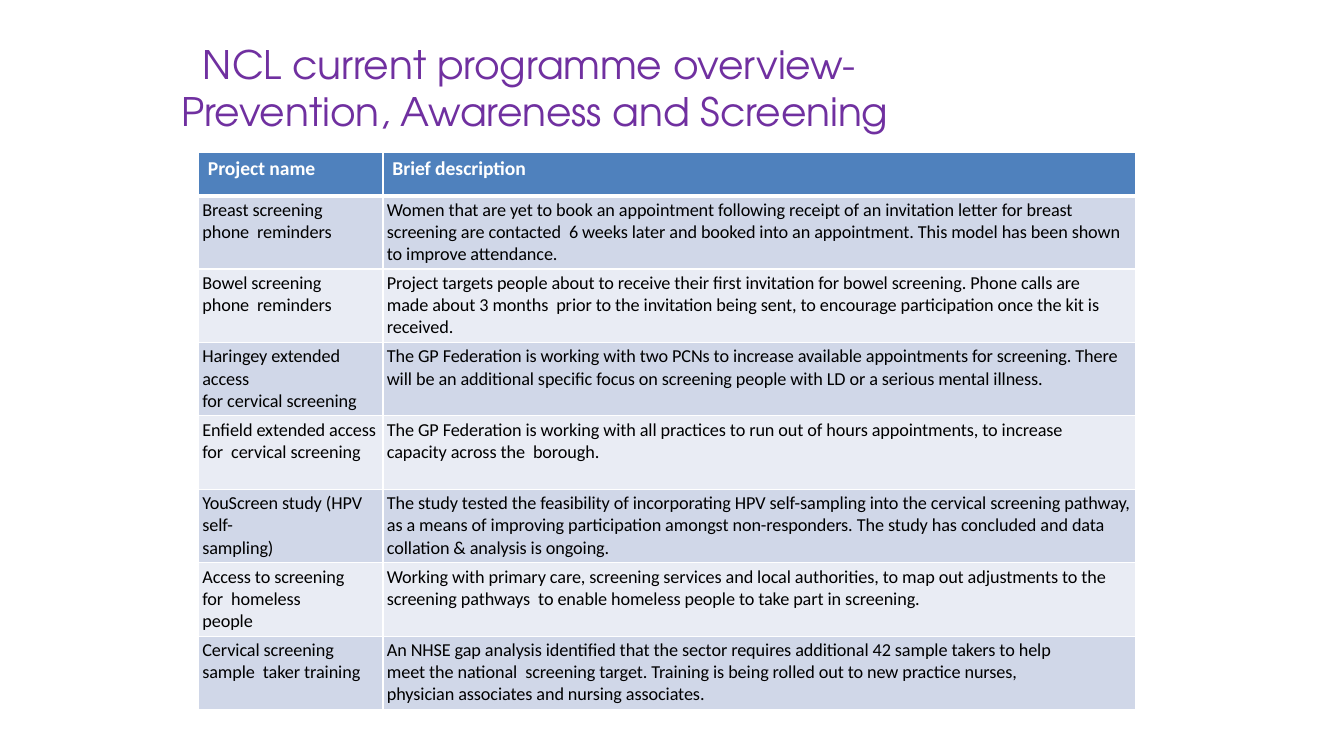
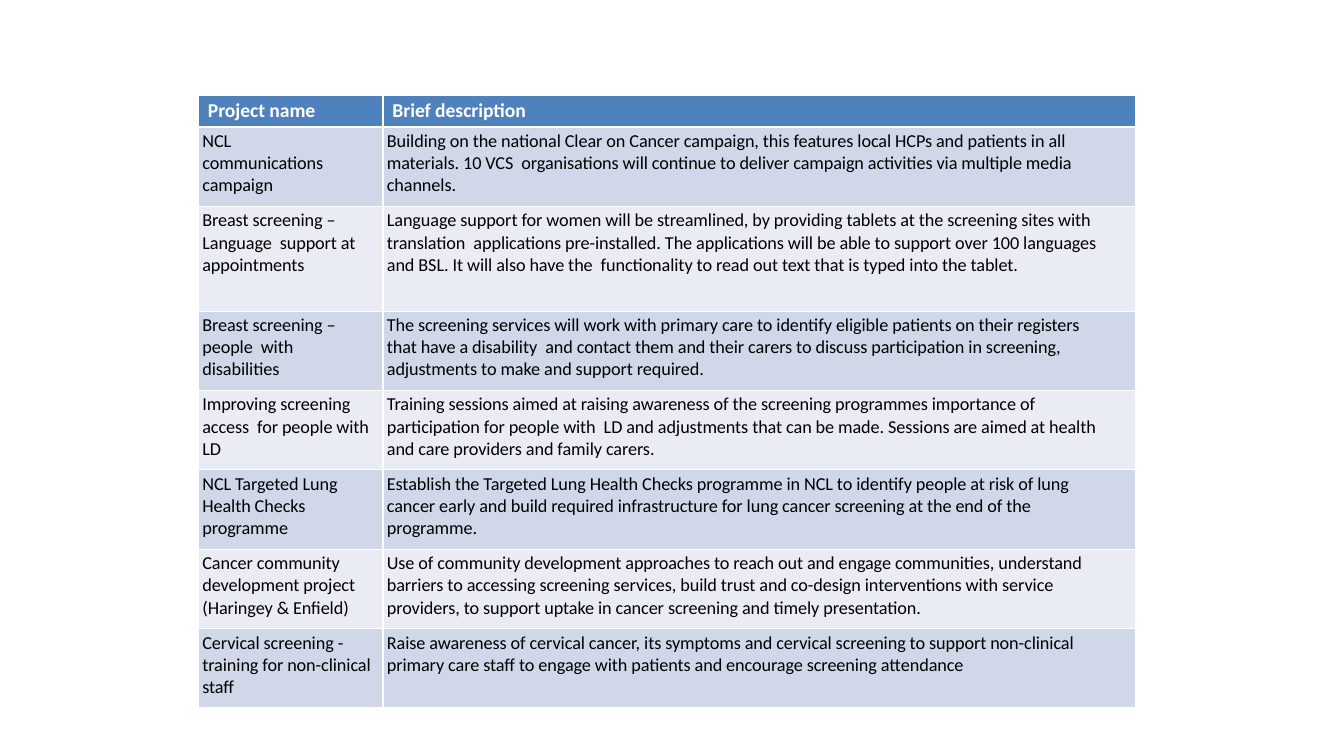
from lxml.etree import SubElement
from pptx import Presentation
from pptx.dml.color import RGBColor
from pptx.enum.text import PP_ALIGN
from pptx.oxml.ns import qn
from pptx.util import Cm, Pt

COLORS = {
    "title": "7030A0",
    "header": "4F81BD",
    "band_dark": "D0D7E8",
    "band_light": "E9ECF4",
    "white": "FFFFFF",
    "text": "000000",
}
TITLE_FONT, BODY_FONT = "TeX Gyre Adventor", "Calibri"
TABLE_LEFT = 5
COLUMN_WIDTHS = (4.65, 18.97)
HEADINGS = ("Project name", "Brief description")

# Each project: name, description, right margins (cm) of the two cells
SCREENING_PROJECTS = [
    ("Breast screening phone  reminders",
     "Women that are yet to book an appointment following receipt of an invitation "
     "letter for breast screening are contacted  6 weeks later and booked into an "
     "appointment. This model has been shown to improve attendance.", (0.9, 0)),
    ("Bowel screening phone  reminders",
     "Project targets people about to receive their first invitation for bowel "
     "screening. Phone calls are made about 3 months  prior to the invitation being "
     "sent, to encourage participation once the kit is received.", (0.9, 0.4)),
    ("Haringey extended access\nfor cervical screening",
     "The GP Federation is working with two PCNs to increase available appointments "
     "for screening. There will be an additional specific focus on screening people "
     "with LD or a serious mental illness.", (0, 0)),
    ("Enfield extended access for  cervical screening",
     "The GP Federation is working with all practices to run out of hours "
     "appointments, to increase capacity across the  borough.", (0, 0.4)),
    ("YouScreen study (HPV self-\nsampling)",
     "The study tested the feasibility of incorporating HPV self-sampling into the "
     "cervical screening pathway, as a means of improving participation amongst "
     "non-responders. The study has concluded and data collation & analysis is "
     "ongoing.", (0, 0)),
    ("Access to screening for  homeless people",
     "Working with primary care, screening services and local authorities, to map "
     "out adjustments to the screening pathways  to enable homeless people to take "
     "part in screening.", (0.9, 0)),
    ("Cervical screening sample  taker training",
     "An NHSE gap analysis identified that the sector requires additional 42 sample "
     "takers to help meet the national  screening target. Training is being rolled "
     "out to new practice nurses, physician associates and nursing associates.",
     (0, 1.4)),
]
COMMUNITY_PROJECTS = [
    ("NCL communications  campaign",
     "Building on the national Clear on Cancer campaign, this features local HCPs "
     "and patients in all materials. 10 VCS  organisations will continue to deliver "
     "campaign activities via multiple media channels.", (1, 0.76)),
    ("Breast screening – Language  support at appointments",
     "Language support for women will be streamlined, by providing tablets at the "
     "screening sites with translation  applications pre-installed. The applications "
     "will be able to support over 100 languages and BSL. It will also have the  "
     "functionality to read out text that is typed into the tablet.", (0, 0.76)),
    ("Breast screening – people  with disabilities",
     "The screening services will work with primary care to identify eligible "
     "patients on their registers that have a disability  and contact them and their "
     "carers to discuss participation in screening, adjustments to make and support "
     "required.", (0.9, 0.76)),
    ("Improving screening access  for people with LD",
     "Training sessions aimed at raising awareness of the screening programmes "
     "importance of participation for people with  LD and adjustments that can be "
     "made. Sessions are aimed at health and care providers and family carers.",
     (0, 0.76)),
    ("NCL Targeted Lung Health Checks programme",
     "Establish the Targeted Lung Health Checks programme in NCL to identify people "
     "at risk of lung cancer early and build required infrastructure for lung cancer "
     "screening at the end of the programme.", (0, 0.76)),
    ("Cancer community development project (Haringey & Enfield)",
     "Use of community development approaches to reach out and engage communities, "
     "understand barriers to accessing screening services, build trust and co-design "
     "interventions with service providers, to support uptake in cancer screening "
     "and timely presentation.", (0, 0.76)),
    ("Cervical screening - training for non-clinical staff",
     "Raise awareness of cervical cancer, its symptoms and cervical screening to "
     "support non-clinical primary care staff to engage with patients and encourage "
     "screening attendance", (0, 0.76)),
]


class Deck:
    """Holds the shared style and the slide being built."""

    def __init__(self):
        self.prs = Presentation()
        self.prs.slide_width, self.prs.slide_height = Cm(33.87), Cm(19.05)
        self.s = None

    def new_slide(self):
        self.s = self.prs.slides.add_slide(self.prs.slide_layouts[6])

    def add_text(self, tf, text, font, size, color, bold=False, align=None):
        """Put each line of text in its own paragraph, slightly tightened."""
        for i, line in enumerate(text.split("\n")):
            p = tf.paragraphs[0] if i == 0 else tf.add_paragraph()
            p.alignment = align
            r = p.add_run()
            r.text = line
            r.font.name, r.font.size, r.font.bold = font, Pt(size), bold
            r.font.color.rgb = RGBColor.from_string(COLORS[color])
            r.font._element.set("spc", "-5")

    def title(self, text):
        tf = self.s.shapes.add_textbox(Cm(2.18), Cm(1.02), Cm(22.6), Cm(2.64)).text_frame
        tf.word_wrap = True
        tf.margin_left = tf.margin_right = tf.margin_top = tf.margin_bottom = 0
        self.add_text(tf, text, TITLE_FONT, 28, "title", align=PP_ALIGN.CENTER)

    def borders(self, cell, top=1, bottom=1):
        tc_pr = cell._tc.get_or_add_tcPr()
        for side, width in (("L", 1), ("R", 1), ("T", top), ("B", bottom)):
            ln = SubElement(tc_pr, qn(f"a:ln{side}"), w=str(Pt(width)))
            fill = SubElement(ln, qn("a:solidFill"))
            SubElement(fill, qn("a:srgbClr"), val=COLORS["white"])

    def cell(self, cell, text, fill, left, top, right, **style):
        cell.margin_left, cell.margin_top = Cm(left), Cm(top)
        cell.margin_right, cell.margin_bottom = Cm(right), 0
        cell.fill.solid()
        cell.fill.fore_color.rgb = RGBColor.from_string(COLORS[fill])
        self.add_text(cell.text_frame, text, BODY_FONT, **style)

    def project_table(self, top, projects, heights, header_rule):
        """Heights in cm, header row first; header_rule in points."""
        table = self.s.shapes.add_table(
            len(heights), len(COLUMN_WIDTHS), Cm(TABLE_LEFT), Cm(top),
            Cm(sum(COLUMN_WIDTHS)), Cm(sum(heights))).table
        for column, width in zip(table.columns, COLUMN_WIDTHS):
            column.width = Cm(width)
        for row, height in zip(table.rows, heights):
            row.height = Cm(height)
        for col, heading in enumerate(HEADINGS):
            cell = table.cell(0, col)
            self.borders(cell, bottom=header_rule)
            self.cell(cell, heading, "header", 0.24, 0.1, 0,
                      size=14, color="white", bold=True)
        for row, (name, description, margins) in enumerate(projects, 1):
            band = "band_dark" if row % 2 else "band_light"
            for col, text in enumerate((name, description)):
                cell = table.cell(row, col)
                self.borders(cell, top=header_rule if row == 1 else 1)
                self.cell(cell, text, band, 0.1, 0.08, margins[col],
                          size=13, color="text")


def main():
    deck = Deck()
    deck.new_slide()
    deck.project_table(3.84, SCREENING_PROJECTS, [1.09] + [1.85] * 7, header_rule=3)
    deck.title("NCL current programme overview- \nPrevention, Awareness and Screening")
    deck.new_slide()
    deck.project_table(2.4, COMMUNITY_PROJECTS, [0.8, 2, 2.64] + [2] * 5, header_rule=1)
    deck.prs.save("out.pptx")


if __name__ == "__main__":
    main()
